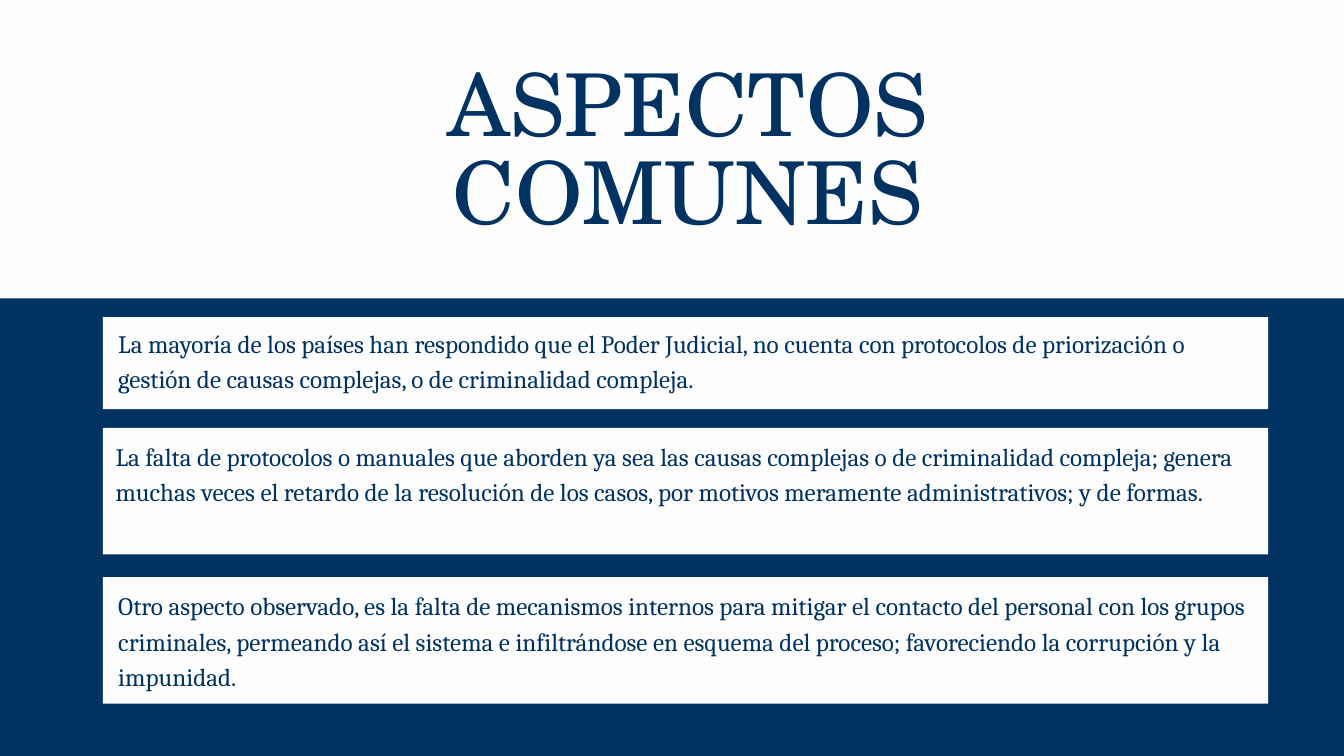
"""Build the slide on common aspects: a title band above three text cards."""
from typing import NamedTuple

from pptx import Presentation
from pptx.dml.color import RGBColor
from pptx.enum.shapes import MSO_SHAPE
from pptx.enum.text import MSO_ANCHOR, MSO_AUTO_SIZE, PP_ALIGN
from pptx.util import Cm, Pt

RECT = MSO_SHAPE.RECTANGLE
TOP = MSO_ANCHOR.TOP
FIXED = MSO_AUTO_SIZE.NONE
LEFT, CENTER = PP_ALIGN.LEFT, PP_ALIGN.CENTER
HUES = {"navy": "013362", "white": "FDFDFD"}
WIDTH, HEIGHT = 50.8, 28.58


class Box(NamedTuple):
    left: float
    top: float
    width: float
    height: float


class Card(NamedTuple):
    panel: Box
    area: Box
    text: str


BAND = Box(0, 0, WIDTH, 11.28)
HEAD = Box(14.48, 2.51, 23.04, 6.73)
CARDS = [
    Card(Box(3.89, 11.99, 44.04, 3.48), Box(4.47, 12.22, 43.05, 3.96),
         "La mayoría de los países han respondido que el Poder Judicial, "
         "no cuenta con protocolos de priorización o gestión de causas "
         "complejas, o de criminalidad compleja."),
    Card(Box(3.89, 16.18, 44.04, 4.78), Box(4.37, 16.51, 43.15, 5.28),
         "La falta de protocolos o manuales que aborden ya sea las causas "
         "complejas o de criminalidad compleja; genera muchas veces el "
         "retardo de la resolución de los casos, por motivos meramente "
         "administrativos; y de formas."),
    Card(Box(3.89, 21.82, 44.04, 4.78), Box(4.47, 22.15, 42.7, 5.28),
         "Otro aspecto observado, es la falta de mecanismos internos para "
         "mitigar el contacto del personal con los grupos criminales, "
         "permeando así el sistema e infiltrándose en esquema del proceso; "
         "favoreciendo la corrupción y la impunidad."),
]


def color(name: str) -> RGBColor:
    return RGBColor.from_string(HUES[name])


def span(box: Box) -> list[Cm]:
    return [Cm(size) for size in box]


def write(shape, text: str, *, font: str = "Cambria", size: float = 26.9,
          line: float = 37.6, align=LEFT, hue: str = "navy") -> None:
    frame = shape.text_frame
    frame.word_wrap = True
    frame.auto_size = FIXED
    frame.vertical_anchor = TOP
    frame.margin_left = frame.margin_right = 0
    frame.margin_top = frame.margin_bottom = 0
    para = frame.paragraphs[0]
    para.alignment = align
    para.line_spacing = Pt(line)
    run = para.add_run()
    run.text = text
    run.font.name = font
    run.font.size = Pt(size)
    run.font.color.rgb = color(hue)


def panel(slide, box: Box) -> None:
    shape = slide.shapes.add_shape(RECT, *span(box))
    shape.shadow.inherit = False
    shape.fill.solid()
    shape.fill.fore_color.rgb = color("white")
    shape.line.fill.background()


def head(slide, box: Box, text: str) -> None:
    title = slide.shapes.title
    title.left, title.top, title.width, title.height = span(box)
    write(title, text, font="TeX Gyre Schola", size=92.9, line=93.8,
          align=CENTER)
    title.element.getparent().append(title.element)


def main() -> None:
    deck = Presentation()
    deck.slide_width, deck.slide_height = Cm(WIDTH), Cm(HEIGHT)
    slide = deck.slides.add_slide(deck.slide_layouts.get_by_name("Title Only"))
    back = slide.background.fill
    back.solid()
    back.fore_color.rgb = color("navy")
    panel(slide, BAND)
    head(slide, HEAD, "ASPECTOS COMUNES")
    for card in CARDS:
        panel(slide, card.panel)
        write(slide.shapes.add_textbox(*span(card.area)), card.text)
    deck.save("out.pptx")


if __name__ == "__main__":
    main()
